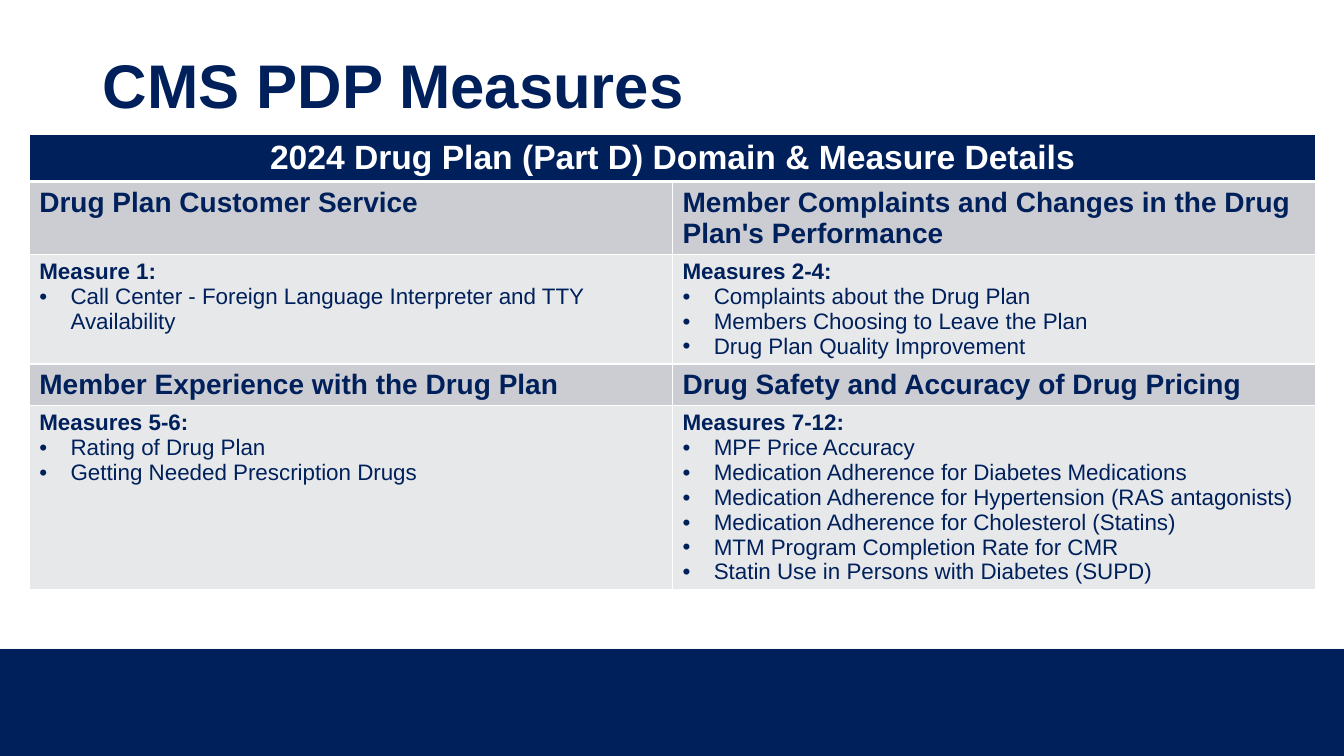
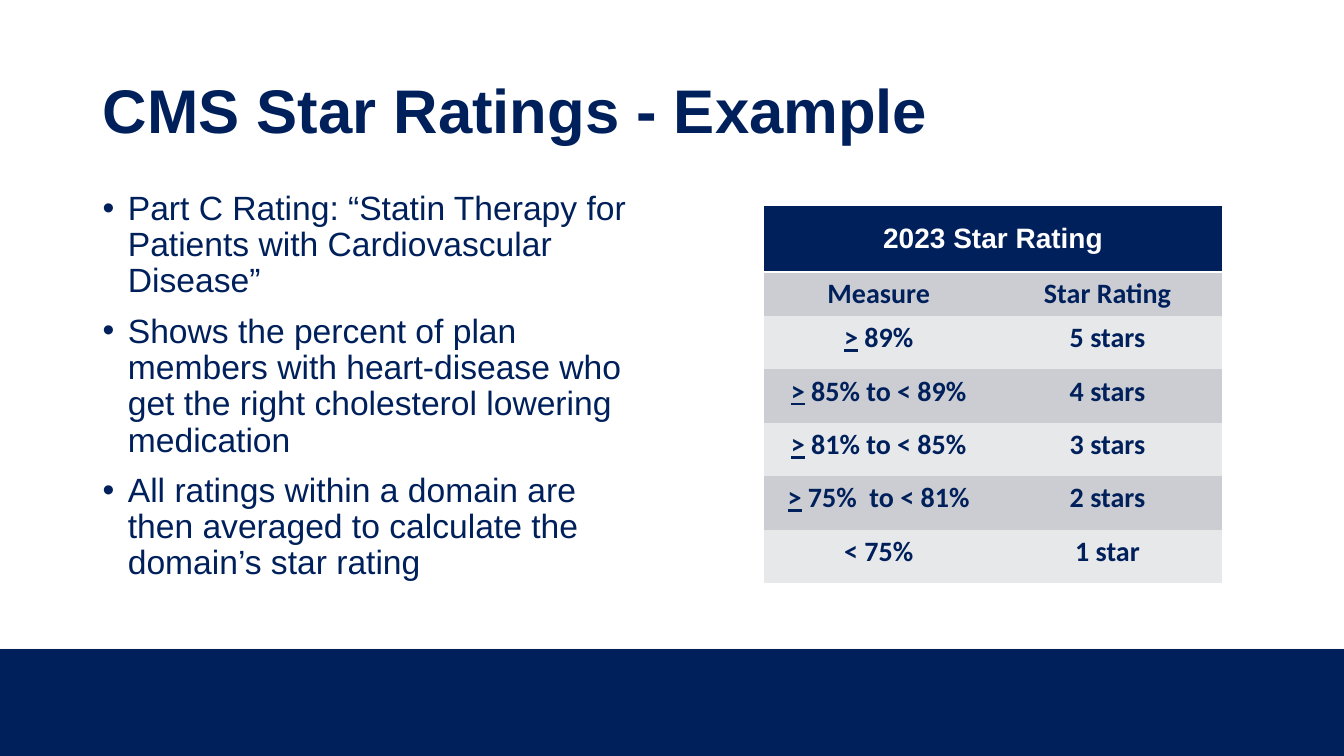
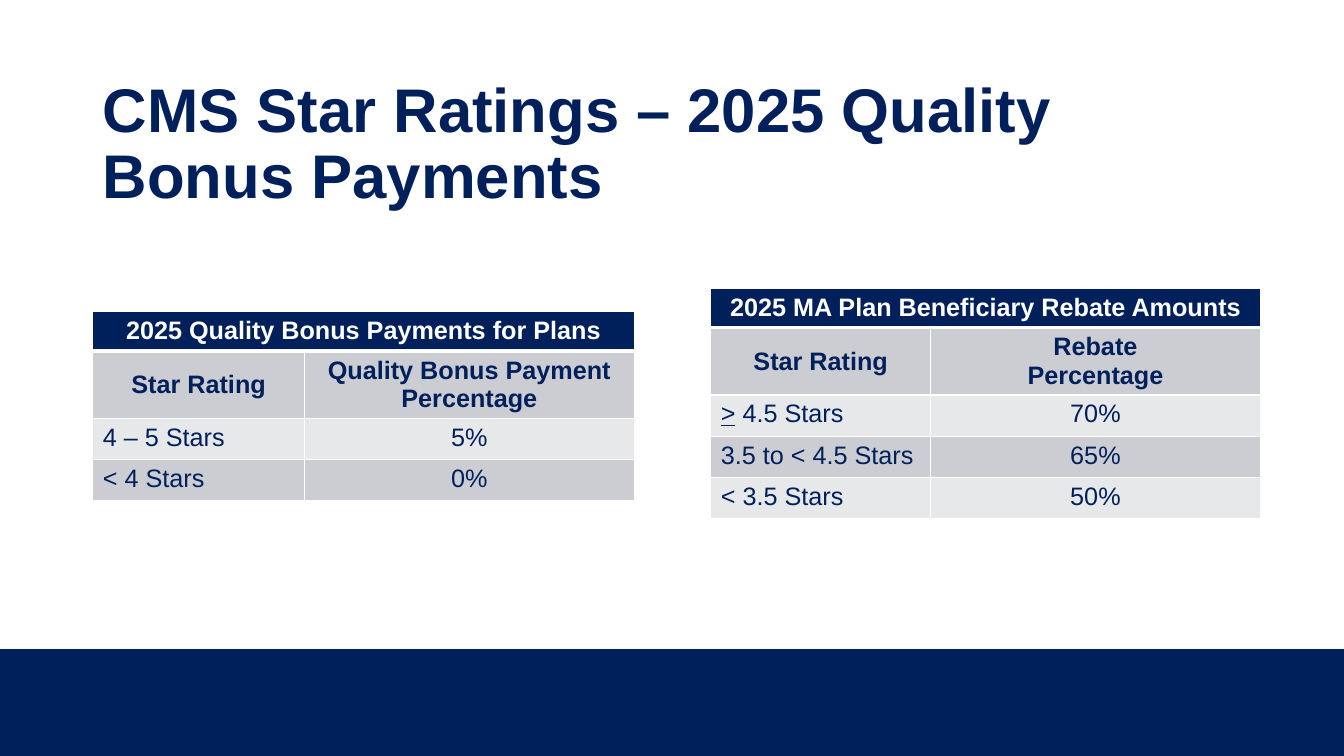
from lxml import etree
from pptx import Presentation
from pptx.dml.color import RGBColor
from pptx.enum.shapes import MSO_SHAPE
from pptx.enum.text import MSO_ANCHOR, MSO_AUTO_SIZE, PP_ALIGN
from pptx.oxml.ns import qn
from pptx.util import Inches, Pt

COLORS = {
    "navy": "00205B",
    "white": "FFFFFF",
    "edge": "F8F8F8",
    "dark_row": "CCCDD2",
    "light_row": "E7E8EA",
}
NO_TABLE_STYLE = "{2D5ABB26-0587-4C30-8999-92F81FD0307C}"
TITLE_ONLY = 5
LEFT, CENTER = PP_ALIGN.LEFT, PP_ALIGN.CENTER
TOP, MIDDLE = MSO_ANCHOR.TOP, MSO_ANCHOR.MIDDLE

TITLE_FONT = {"size": 44, "bold": True}
BODY_FONT = {"size": 24}


def rgb(name):
    return RGBColor.from_string(COLORS[name])


def set_font(font, size, bold=False, name="Arial", color="navy"):
    values = {"size": Pt(size), "bold": bold, "name": name}
    for attribute, value in values.items():
        setattr(font, attribute, value)
    font.color.rgb = rgb(color)


def add_bullet(paragraph, indent):
    properties = paragraph._p.get_or_add_pPr()
    properties.set("marL", str(Inches(indent)))
    properties.set("indent", str(-Inches(indent)))
    font = etree.SubElement(properties, qn("a:buFont"))
    font.set("typeface", "Arial")
    etree.SubElement(properties, qn("a:buChar")).set("char", "•")


def write_lines(frame, text, font, align=LEFT, indent=0.31, **spacing):
    """Write one paragraph a line; "• " makes a bullet, a leading ">" is underlined."""
    for index, line in enumerate(text.split("\n")):
        paragraph = frame.add_paragraph() if index else frame.paragraphs[0]
        paragraph.alignment = align
        for attribute, value in spacing.items():
            if index or attribute != "space_before":
                setattr(paragraph, attribute, value)
        line_font = dict(font)
        if line.startswith("• "):
            add_bullet(paragraph, indent)
            line = line[2:]
            line_font["bold"] = False
        pieces = [">", line[1:]] if line.startswith(">") else [line]
        for piece in pieces:
            run = paragraph.add_run()
            run.text = piece
            set_font(run.font, **line_font)
            if piece == ">":
                run.font.underline = True


def add_footer_band(presentation, slide):
    """Draw the bottom band and move it to the master, so that every slide shows it."""
    master_tree = presentation.slide_master.shapes.element
    for top, color in ((6.43, "edge"), (6.44, "navy")):
        band = slide.shapes.add_shape(
            MSO_SHAPE.RECTANGLE, 0, Inches(top),
            presentation.slide_width, Inches(7.5 - top))
        band.shadow.inherit = False
        band.fill.solid()
        band.fill.fore_color.rgb = rgb(color)
        band.line.fill.background()
        master_tree.append(band.element)


def add_titled_slide(presentation, text, top):
    slide = presentation.slides.add_slide(presentation.slide_layouts[TITLE_ONLY])
    title = slide.shapes.title
    box = {"left": 0.92, "top": top, "width": 11.5, "height": 1.45}
    for attribute, value in box.items():
        setattr(title, attribute, Inches(value))
    frame = title.text_frame
    frame.auto_size = MSO_AUTO_SIZE.NONE
    frame.vertical_anchor = MIDDLE
    write_lines(frame, text, TITLE_FONT, line_spacing=0.9)
    return slide


def add_bullet_list(slide, left, top, width, height, text):
    frame = slide.shapes.add_textbox(*map(Inches, (left, top, width, height))).text_frame
    frame.word_wrap = True
    write_lines(frame, text, BODY_FONT, indent=0.25,
                line_spacing=0.9, space_before=Pt(10))


def set_borders(cell, widths):
    """Put white lines on the cell; a width of 0 gives no line."""
    properties = cell._tc.get_or_add_tcPr()
    for index, (side, width) in enumerate(widths.items()):
        line = etree.Element(qn("a:ln" + side), w=str(Pt(width)))
        if width:
            fill = etree.SubElement(line, qn("a:solidFill"))
            etree.SubElement(fill, qn("a:srgbClr")).set("val", COLORS["white"])
        else:
            etree.SubElement(line, qn("a:noFill"))
        properties.insert(index, line)


def add_grid(slide, left, top, columns, rows, grid_line=1, header_line=3):
    """Add a table; each row is (height, style, texts), the first spans all columns."""
    shape = slide.shapes.add_table(
        len(rows), len(columns), Inches(left), Inches(top),
        Inches(sum(columns)), Inches(sum(row[0] for row in rows)))
    table = shape.table
    table.horz_banding = False
    for style_id in shape.element.iter(qn("a:tableStyleId")):
        style_id.text = NO_TABLE_STYLE
    for column, width in zip(table.columns, columns):
        column.width = Inches(width)
    table.cell(0, 0).merge(table.cell(0, len(columns) - 1))

    for row_index, (height, style, texts) in enumerate(rows):
        table.rows[row_index].height = Inches(height)
        if row_index == 0:
            color = "navy"
        else:
            color = "dark_row" if row_index % 2 else "light_row"
        for column_index in range(len(columns)):
            cell = table.cell(row_index, column_index)
            cell.fill.solid()
            cell.fill.fore_color.rgb = rgb(color)
            set_borders(cell, {
                "L": grid_line, "R": grid_line,
                "T": header_line if row_index == 1 else grid_line,
                "B": header_line if row_index == 0 else grid_line})
            if column_index < len(texts):
                cell.vertical_anchor = style.get("anchor", TOP)
                write_lines(cell.text_frame, texts[column_index], style["font"],
                            style["aligns"][column_index])


def header_style(size, anchor=TOP):
    return {"font": {"size": size, "bold": True, "color": "white"},
            "aligns": [CENTER], "anchor": anchor}


def build_measures(slide):
    domain = {"font": {"size": 20, "bold": True}, "aligns": [LEFT, LEFT]}
    measure = {"font": {"size": 16, "bold": True}, "aligns": [LEFT, LEFT]}
    add_grid(slide, 0.29, 1.33, [6.38, 6.38], [
        (0.47, header_style(24), ["2024 Drug Plan (Part D) Domain & Measure Details"]),
        (0.71, domain, [
            "Drug Plan Customer Service",
            "Member Complaints and Changes in the Drug Plan's Performance"]),
        (1.09, measure, [
            "Measure 1:\n"
            "• Call Center - Foreign Language Interpreter and TTY Availability",
            "Measures 2-4:\n"
            "• Complaints about the Drug Plan\n"
            "• Members Choosing to Leave the Plan\n"
            "• Drug Plan Quality Improvement"]),
        (0.41, domain, [
            "Member Experience with the Drug Plan",
            "Drug Safety and Accuracy of Drug Pricing"]),
        (1.82, measure, [
            "Measures 5-6:\n"
            "• Rating of Drug Plan\n"
            "• Getting Needed Prescription Drugs",
            "Measures 7-12:\n"
            "• MPF Price Accuracy\n"
            "• Medication Adherence for Diabetes Medications\n"
            "• Medication Adherence for Hypertension (RAS antagonists)\n"
            "• Medication Adherence for Cholesterol (Statins)\n"
            "• MTM Program Completion Rate for CMR\n"
            "• Statin Use in Persons with Diabetes (SUPD)"]),
    ])


def build_example(slide):
    add_bullet_list(
        slide, 0.92, 1.85, 5.63, 4.27,
        "• Part C Rating: “Statin Therapy for Patients with Cardiovascular Disease”\n"
        "• Shows the percent of plan members with heart-disease who get the right "
        "cholesterol lowering medication\n"
        "• All ratings within a domain are then averaged to calculate the "
        "domain’s star rating")
    rating = {"font": {"size": 20, "bold": True, "name": "Calibri"},
              "aligns": [CENTER, CENTER]}
    thresholds = [
        ("> 89%", "5 stars"),
        ("> 85% to < 89%", "4 stars"),
        ("> 81% to < 85%", "3 stars"),
        ("> 75%  to < 81%", "2 stars"),
        ("< 75%", "1 star"),
    ]
    add_grid(slide, 7.58, 2.04, [2.27, 2.27], [
        (0.66, header_style(20, MIDDLE), ["2023 Star Rating"]),
        (0.38, rating, ["Measure", "Star Rating"]),
        *[(0.53, rating, texts) for texts in thresholds],
    ], grid_line=0, header_line=2)


def build_payments(slide):
    heading = {"font": {"size": 18, "bold": True},
               "aligns": [CENTER, CENTER], "anchor": MIDDLE}
    value = {"font": {"size": 18}, "aligns": [LEFT, CENTER]}
    tables = [
        (0.92, 3.09, 2.1, "2025 Quality Bonus Payments for Plans",
         "Quality Bonus Payment Percentage",
         [("4 – 5 Stars", "5%"), ("< 4 Stars", "0%")]),
        (7.05, 2.86, 2.18, "2025 MA Plan Beneficiary Rebate Amounts",
         "Rebate\nPercentage",
         [("> 4.5 Stars", "70%"), ("3.5 to < 4.5 Stars", "65%"),
          ("< 3.5 Stars", "50%")]),
    ]
    for left, top, first_column, title, measure, values in tables:
        add_grid(slide, left, top, [first_column, 3.27], [
            (0.39, header_style(18), [title]),
            (0.67, heading, ["Star Rating", measure]),
            *[(0.41, value, texts) for texts in values],
        ])


def main():
    presentation = Presentation()
    presentation.slide_width = Inches(13.33)
    presentation.slide_height = Inches(7.5)
    pages = [
        ("CMS PDP Measures", 0.15, build_measures),
        ("CMS Star Ratings - Example", 0.4, build_example),
        ("CMS Star Ratings – 2025 Quality Bonus Payments", 0.72, build_payments),
    ]
    for title, top, build in pages:
        build(add_titled_slide(presentation, title, top))
    add_footer_band(presentation, presentation.slides[0])
    presentation.save("out.pptx")


if __name__ == "__main__":
    main()
